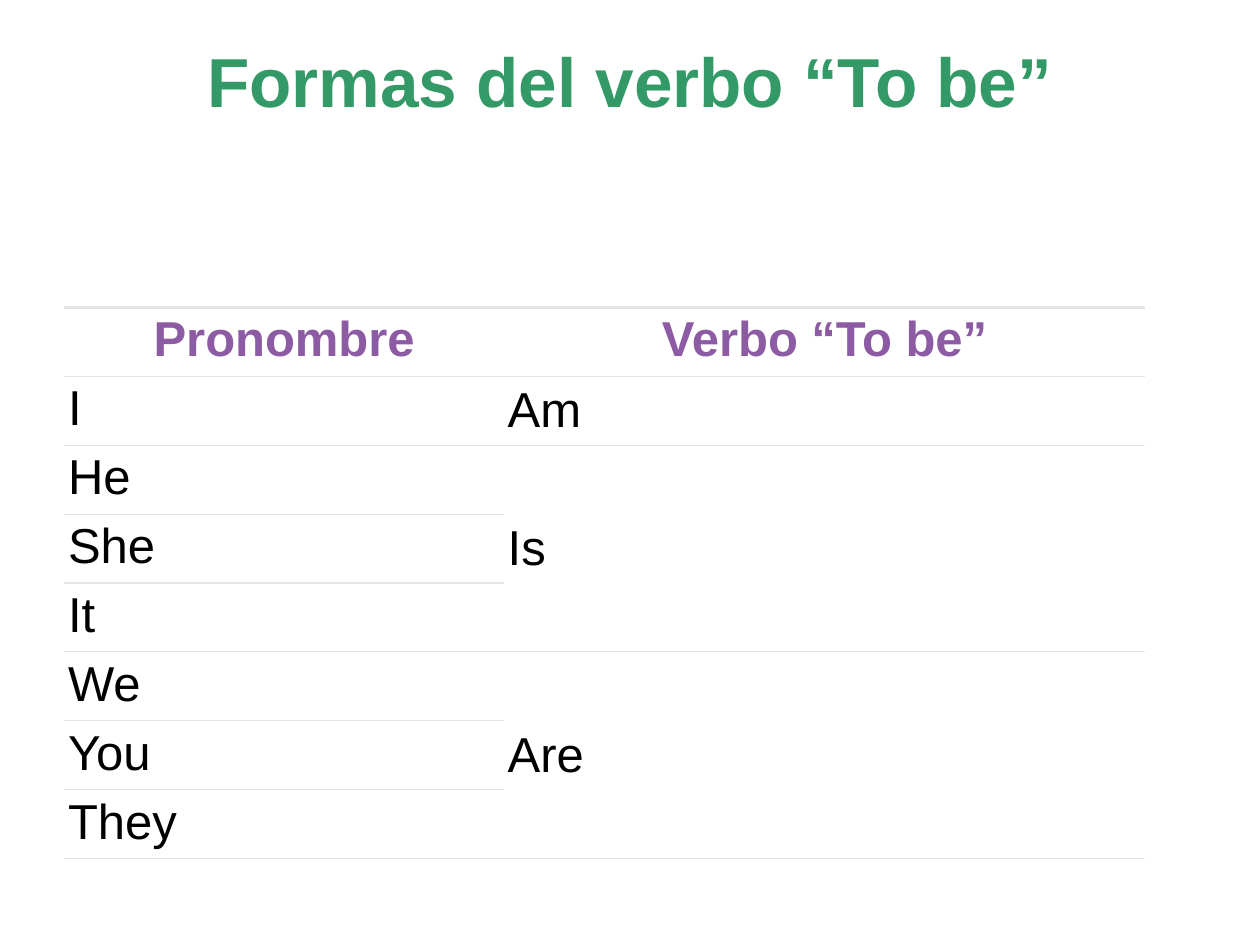
from lxml import etree
from pptx import Presentation
from pptx.dml.color import RGBColor
from pptx.enum.text import MSO_ANCHOR, PP_ALIGN
from pptx.oxml.ns import qn
from pptx.util import Inches, Pt

LEFT, CENTER = PP_ALIGN.LEFT, PP_ALIGN.CENTER
TOP, MIDDLE = MSO_ANCHOR.TOP, MSO_ANCHOR.MIDDLE
GREEN, PURPLE, BLACK, WHITE, GRAY = "339966", "8D5BA4", "000000", "FFFFFF", "E4E4E2"

HEADERS = ("Pronombre", "Verbo “To be”")
FORMS = (("Am", ("I",)), ("Is", ("He", "She", "It")), ("Are", ("We", "You", "They")))
COL_WIDTHS = (3.49, 5.09)
SPACER_HEIGHT, ROW_HEIGHT = 0.89, 0.54


def rgb(color):
    return RGBColor.from_string(color)


def write(tf, text, size, color, bold=False, align=LEFT):
    p = tf.paragraphs[0]
    p.alignment = align
    r = p.add_run()
    r.text = text
    font = {"name": "Arial", "size": Pt(size), "bold": bold}
    for name, value in font.items():
        setattr(r.font, name, value)
    r.font.color.rgb = rgb(color)


def add_title(s, text):
    tf = s.shapes.add_textbox(Inches(0.5), Inches(0.3), Inches(9), Inches(1.25)).text_frame
    frame = {"word_wrap": True, "vertical_anchor": TOP, "margin_top": 0}
    for name, value in frame.items():
        setattr(tf, name, value)
    write(tf, text, 39.6, GREEN, True, CENTER)


def set_borders(cell, widths):
    tcPr = cell._tc.get_or_add_tcPr()
    for i, side in enumerate(("lnL", "lnR", "lnT", "lnB")):
        width = widths.get(side, 0)
        ln = etree.Element(qn(f"a:{side}"), w=str(Pt(width)))
        if width:
            fill = etree.SubElement(ln, qn("a:solidFill"))
            etree.SubElement(fill, qn("a:srgbClr"), val=GRAY)
        else:
            etree.SubElement(ln, qn("a:noFill"))
        tcPr.insert(i, ln)


def style_cell(cell, widths):
    margins = {"margin_left": 0.03, "margin_right": 0.03, "margin_top": 0.04, "margin_bottom": 0.04}
    for name, value in margins.items():
        setattr(cell, name, Inches(value))
    cell.fill.solid()
    cell.fill.fore_color.rgb = rgb(WHITE)
    set_borders(cell, widths)


def fill_forms(table):
    row = 2
    for verb, pronouns in FORMS:
        last = row + len(pronouns) - 1
        verb_cell = table.cell(row, 1)
        if last > row:
            verb_cell.merge(table.cell(last, 1))
        verb_cell.vertical_anchor = MIDDLE
        write(verb_cell.text_frame, verb, 28, BLACK)
        for i, pronoun in enumerate(pronouns):
            write(table.cell(row + i, 0).text_frame, pronoun, 28, BLACK)
        row = last + 1


def add_verb_table(s):
    rows = 2 + sum(len(pronouns) for _, pronouns in FORMS)
    height = SPACER_HEIGHT + ROW_HEIGHT * (rows - 1)
    table = s.shapes.add_table(rows, 2, Inches(0.51), Inches(1.55),
                               Inches(sum(COL_WIDTHS)), Inches(height)).table
    table.first_row = table.horz_banding = False
    for col, width in zip(table.columns, COL_WIDTHS):
        col.width = Inches(width)
    for i, row in enumerate(table.rows):
        row.height = Inches(ROW_HEIGHT if i else SPACER_HEIGHT)

    table.cell(0, 0).merge(table.cell(0, 1))
    for c, text in enumerate(HEADERS):
        write(table.cell(1, c).text_frame, text, 28, PURPLE, True, CENTER)
    fill_forms(table)

    for r in range(rows):
        for c in range(2):
            cell = table.cell(r, c)
            below_merged = r + 1 < rows and c == 1 and table.cell(r + 1, c).is_spanned
            inside = c == 1 and r > 0 and cell.is_spanned
            top = 0 if r == 0 or inside else 1.5 if r == 1 else 0.75
            bottom = 1.5 if r == 0 else 0.75
            if below_merged and not cell.is_merge_origin:
                bottom = 0
            style_cell(cell, {"lnT": top, "lnB": bottom})


def main():
    prs = Presentation()
    prs.slide_width, prs.slide_height = Inches(10), Inches(7.5)
    s = prs.slides.add_slide(prs.slide_layouts[6])
    add_title(s, "Formas del verbo “To be”")
    add_verb_table(s)
    prs.save("out.pptx")


if __name__ == "__main__":
    main()
